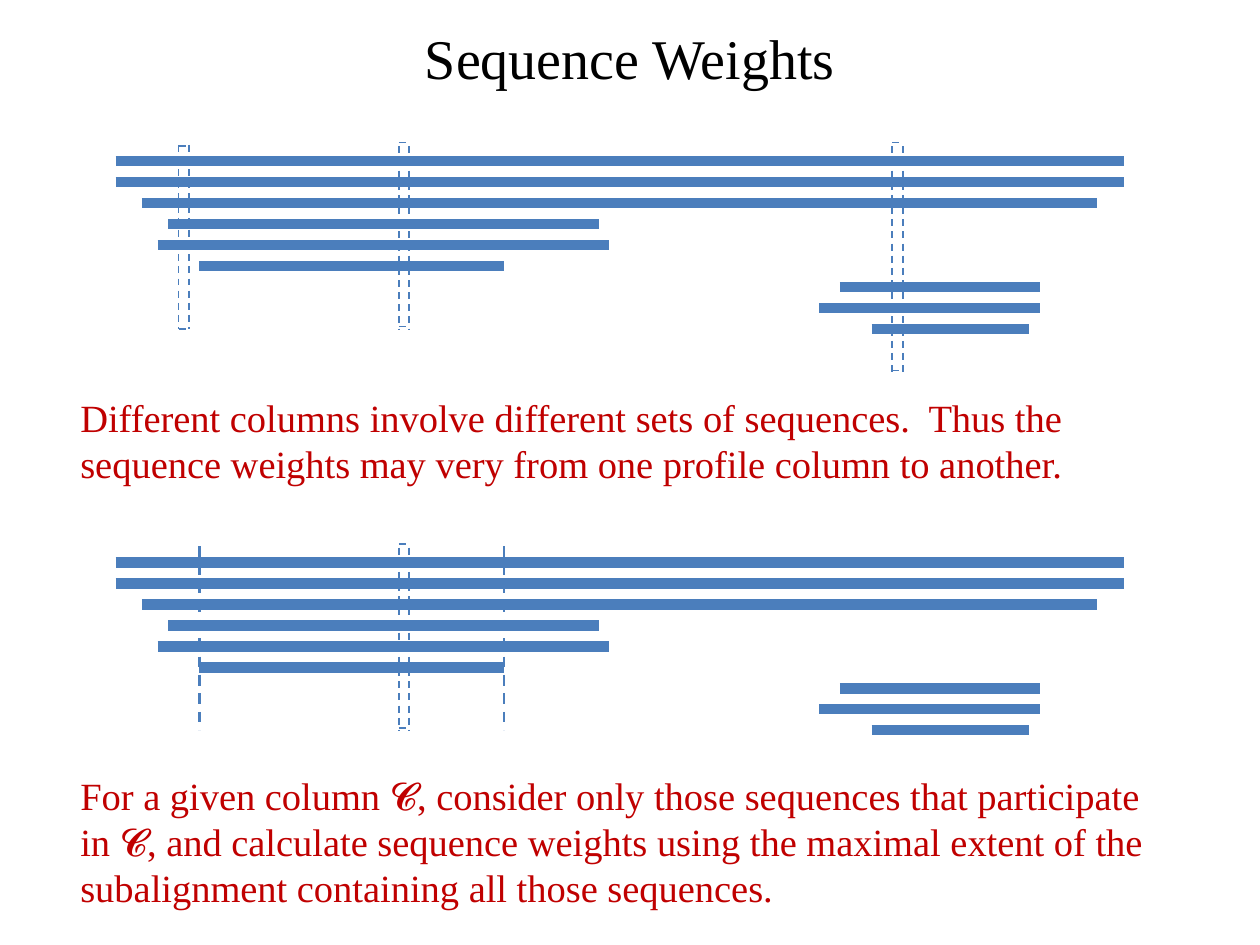
from dataclasses import dataclass

from lxml.etree import SubElement
from pptx import Presentation
from pptx.dml.color import RGBColor
from pptx.enum.dml import MSO_LINE
from pptx.enum.shapes import MSO_CONNECTOR
from pptx.enum.text import MSO_ANCHOR, MSO_AUTO_SIZE, PP_ALIGN
from pptx.oxml.ns import qn
from pptx.util import Cm, Pt


@dataclass(frozen=True)
class Theme:
    font: str = "Times New Roman"
    title_color: RGBColor = RGBColor(0x00, 0x00, 0x00)
    body_color: RGBColor = RGBColor(0xC0, 0x00, 0x00)
    line_color: RGBColor = RGBColor(0x4B, 0x7E, 0xBC)
    title_size: Pt = Pt(32)
    body_size: Pt = Pt(22)
    sequence_width: Pt = Pt(6)
    column_width: Pt = Pt(1)
    extent_width: Pt = Pt(1.5)


theme = Theme()

# Left and right end of each aligned sequence, from the top row down (cm)
sequences = [
    (2.33, 22.65), (2.33, 22.65), (2.86, 22.12),
    (3.39, 12.07), (3.18, 12.28), (4.02, 10.16),
    (16.93, 20.96), (16.51, 20.96), (17.57, 20.74),
]
row_gap = 3.38 / 8
column_gap = 0.21

# Dashed columns: left, side top and bottom, cap top and bottom;
# heights are measured from the first sequence (cm)
first_column = (3.6, -0.33, 3.38, -0.3, 3.38)
middle_column = (8.04, -0.3, 3.4, -0.38, 3.33)
last_column = (17.99, -0.3, 4.24, -0.38, 4.22)

# Each alignment: first row, dashed columns, limits of the subalignment
alignments = [
    (3.25, [first_column, middle_column, last_column], []),
    (11.34, [middle_column], [4.02, 10.16]),
]


def add_line(group, start, end, width, dashed=True):
    line = group.shapes.add_connector(
        MSO_CONNECTOR.STRAIGHT, *(Cm(value) for value in start + end))
    line.line.color.rgb = theme.line_color
    line.line.width = width
    if dashed:
        line.line.dash_style = MSO_LINE.DASH
    SubElement(line._element.spPr, qn("a:effectLst"))


def add_text(slide, text, position, size, color):
    box = slide.shapes.add_textbox(*(Cm(value) for value in position))
    frame = box.text_frame
    frame.word_wrap = True
    frame.text = text
    for span in frame.paragraphs[0].runs:
        span.font.name = theme.font
        span.font.size = size
        span.font.color.rgb = color
    return frame


deck = Presentation()
deck.slide_width, deck.slide_height = Cm(25.4), Cm(19.05)
page = deck.slides.add_slide(deck.slide_layouts[6])

title = add_text(page, "Sequence Weights", (1.27, 0.2, 22.86, 1.9),
                 theme.title_size, theme.title_color)
title.vertical_anchor = MSO_ANCHOR.MIDDLE
title.paragraphs[0].alignment = PP_ALIGN.CENTER

for top, columns, limits in alignments:
    alignment = page.shapes.add_group_shape()
    for row, (left, right) in enumerate(sequences):
        y = top + row * row_gap
        add_line(alignment, (left, y), (right, y), theme.sequence_width, dashed=False)
    for left, side_top, side_bottom, *caps in columns:
        right = left + column_gap
        for x in (left, right):
            add_line(alignment, (x, top + side_top), (x, top + side_bottom),
                     theme.column_width)
        for cap in caps:
            add_line(alignment, (left, top + cap), (right, top + cap),
                     theme.column_width)
    for x in limits:
        add_line(alignment, (x, top - 0.33), (x, top + 3.38), theme.extent_width)

statements = [
    ("Different columns involve different sets of sequences.  Thus the "
     "sequence weights may very from one profile column to another.",
     (1.37, 7.82, 22.23, 2.13)),
    ("For a given column 𝓒, consider only those sequences that participate "
     "in 𝓒, and calculate sequence weights using the maximal extent of the "
     "subalignment containing all those sequences.",
     (1.37, 15.44, 22.56, 3.07)),
]
for text, position in statements:
    statement = add_text(page, text, position, theme.body_size, theme.body_color)
    statement.auto_size = MSO_AUTO_SIZE.SHAPE_TO_FIT_TEXT

deck.save("out.pptx")
